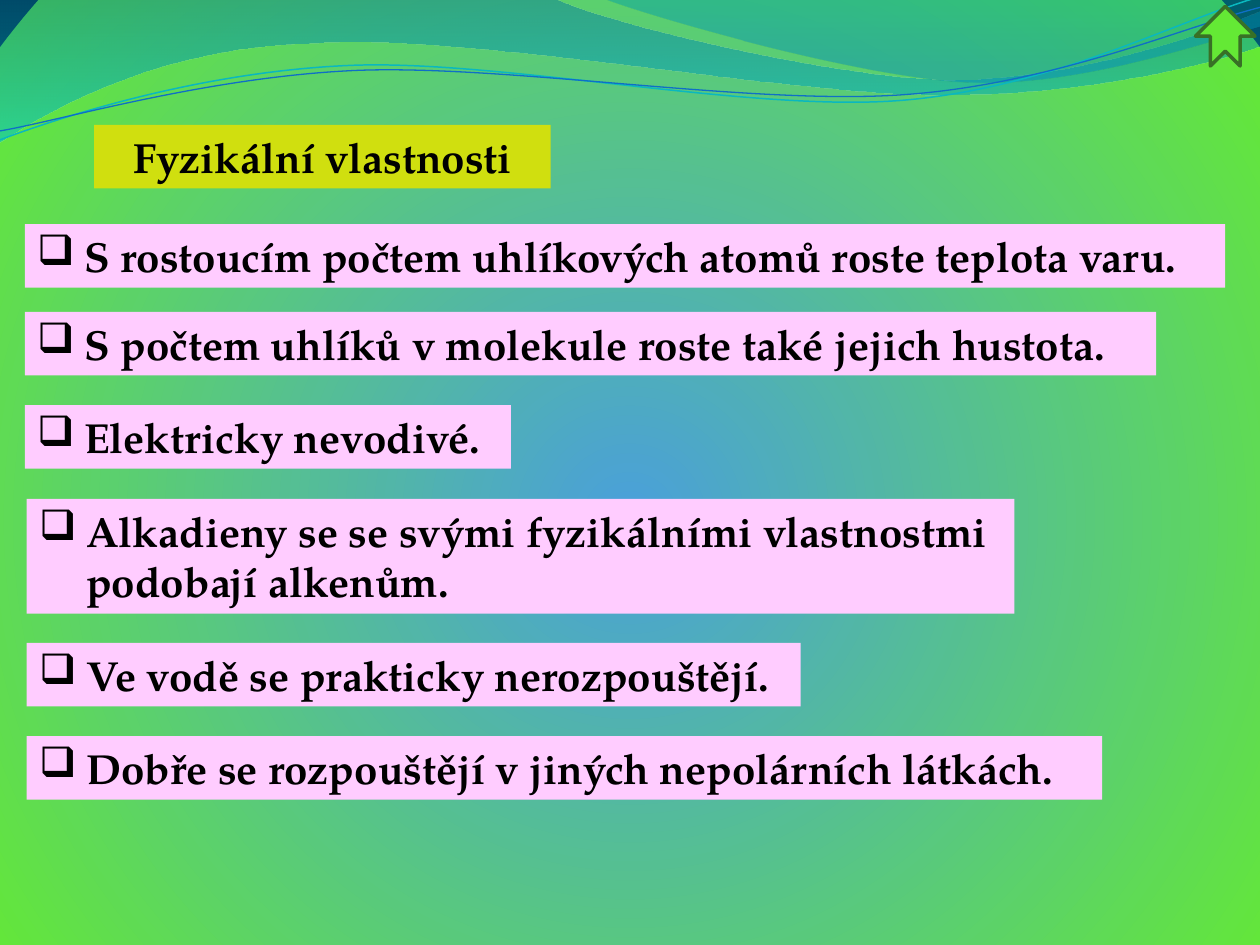
from dataclasses import dataclass

from lxml import etree
from pptx import Presentation
from pptx.dml.color import RGBColor
from pptx.enum.shapes import MSO_SHAPE
from pptx.enum.text import MSO_AUTO_SIZE, PP_ALIGN
from pptx.oxml.ns import qn
from pptx.util import Cm, Pt

ARROW = MSO_SHAPE.NOTCHED_RIGHT_ARROW
GROW = MSO_AUTO_SIZE.SHAPE_TO_FIT_TEXT
LEFT = PP_ALIGN.LEFT
CENTER = PP_ALIGN.CENTER


@dataclass(frozen=True)
class Theme:
    font: str = "TeX Gyre Pagella"
    text_size: float = 24
    text: str = "000000"
    title_fill: str = "D0DF0F"
    fact_fill: str = "FFCCFF"
    arrow_fill: str = "64E935"
    arrow_line: str = "387026"
    background: tuple = ((0, "4A9FDB", 100), (100, "64E935", 100), (100, "002A3C", 100))
    wide_wave: tuple = ((0, "0074A1", 45), (100, "00C6CF", 55))
    right_wave: tuple = ((0, "00A1A9", 45), (80, "008BBF", 45))
    cyan_line: str = "0AB8BF"
    blue_line: str = "0F6FC6"


THEME = Theme()

WIDE_WAVE = [
    (0, 0), (11.18, -0.03),
    (12.09, 0.43, 16.87, 1.6, 19.25, 1.6),
    (21.67, 1.6, 24.33, 0.66, 25.4, 0.23),
    (25.43, 0.91),
    (24.97, 1.12, 22.1, 1.93, 18.95, 1.91),
    (15.8, 1.91, 9.7, 0.71, 6.53, 0.86),
    (3.28, 0.91, 1.17, 2.11, -0.03, 2.87),
    (0, 0),
]
RIGHT_WAVE = [
    (12.17, -0.03),
    (12.93, 0.28, 17.32, 1.57, 19.53, 1.65),
    (21.74, 1.75, 24.41, 0.81, 25.4, 0.53),
    (25.4, 0), (12.17, -0.03),
]
CYAN_CURVE = [
    (0, 2.82),
    (1.22, 2.36, 4.01, 1.45, 7.04, 1.32),
    (10.03, 1.19, 15.06, 2.26, 18.11, 2.03),
    (21.16, 1.8, 23.83, 0.38, 25.35, -0.05),
]
BLUE_CURVE = [
    (0, 2.64),
    (1.19, 2.44, 4.17, 1.55, 7.19, 1.42),
    (10.24, 1.3, 15.16, 2.13, 18.21, 1.91),
    (21.23, 1.7, 23.9, 0.53, 25.4, 0.15),
]
FACTS = [
    ("S rostoucím počtem uhlíkových atomů roste teplota varu.", 0.5, 4.52, 24.2, 1.28),
    ("S počtem uhlíků v molekule roste také jejich hustota.", 0.5, 6.29, 22.81, 1.28),
    ("Elektricky nevodivé.", 0.5, 8.17, 9.8, 1.28),
    ("Alkadieny se se svými fyzikálními vlastnostmi podobají alkenům.", 0.54, 10.06, 19.91, 2.31),
    ("Ve vodě se prakticky nerozpouštějí.", 0.54, 12.96, 15.6, 1.28),
    ("Dobře se rozpouštějí v jiných nepolárních látkách.", 0.54, 14.84, 21.68, 1.28),
]


def set_gradient(fill, element, stops, radial=False):
    fill.gradient()
    gradient = next(element.iter(qn("a:gradFill")))
    for child in list(gradient):
        gradient.remove(child)
    stop_list = etree.SubElement(gradient, qn("a:gsLst"))
    for position, color, opacity in stops:
        stop = etree.SubElement(stop_list, qn("a:gs"), pos=str(position * 1000))
        color_element = etree.SubElement(stop, qn("a:srgbClr"), val=color)
        if opacity < 100:
            etree.SubElement(color_element, qn("a:alpha"), val=str(opacity * 1000))
    if radial:
        circle = etree.SubElement(gradient, qn("a:path"), path="circle")
        etree.SubElement(circle, qn("a:fillToRect"), l="10000", t="110000", r="10000", b="100000")
    else:
        etree.SubElement(gradient, qn("a:lin"), ang="5400000", scaled="1")


def add_outline(slide, segments, closed):
    start, *ends = [(Cm(segment[-2]), Cm(segment[-1])) for segment in segments]
    builder = slide.shapes.build_freeform(*start)
    builder.add_line_segments(ends, close=closed)
    shape = builder.convert_to_shape()
    shape.shadow.inherit = False
    steps = list(shape.element.iter(qn("a:lnTo")))
    for step, segment in zip(steps, segments[1:]):
        if len(segment) == 2:
            continue
        curve = etree.Element(qn("a:cubicBezTo"))
        for x, y in zip(segment[::2], segment[1::2]):
            etree.SubElement(curve, qn("a:pt"), x=str(Cm(x) - shape.left), y=str(Cm(y) - shape.top))
        step.getparent().replace(step, curve)
    return shape


def add_wave(slide, segments, stops):
    shape = add_outline(slide, segments, True)
    set_gradient(shape.fill, shape.element, stops)
    shape.line.fill.background()


def add_curve(slide, segments, color, width):
    shape = add_outline(slide, segments, False)
    shape.fill.background()
    shape.line.color.rgb = RGBColor.from_string(color)
    shape.line.width = Pt(width)


def add_bullet(paragraph):
    properties = paragraph._p.get_or_add_pPr()
    properties.set("marL", str(Cm(0.95)))
    properties.set("indent", str(Cm(-0.95)))
    etree.SubElement(properties, qn("a:buChar"), char="❑")


def add_text(slide, text, left, top, width, height, *, fill, align=LEFT, bullet=False):
    shape = slide.shapes.add_textbox(Cm(left), Cm(top), Cm(width), Cm(height))
    shape.fill.solid()
    shape.fill.fore_color.rgb = RGBColor.from_string(fill)
    shape.text_frame.word_wrap = True
    shape.text_frame.auto_size = GROW
    paragraph = shape.text_frame.paragraphs[0]
    paragraph.alignment = align
    if bullet:
        add_bullet(paragraph)
    run = paragraph.add_run()
    run.text = text
    run.font.name = THEME.font
    run.font.size = Pt(THEME.text_size)
    run.font.bold = True
    run.font.color.rgb = RGBColor.from_string(THEME.text)


def add_up_arrow(slide):
    shape = slide.shapes.add_shape(ARROW, Cm(24.1), Cm(0.13), Cm(1.2), Cm(1.2))
    shape.rotation = 270
    shape.shadow.inherit = False
    shape.fill.solid()
    shape.fill.fore_color.rgb = RGBColor.from_string(THEME.arrow_fill)
    shape.line.color.rgb = RGBColor.from_string(THEME.arrow_line)
    shape.line.width = Pt(2)


def main():
    presentation = Presentation()
    presentation.slide_width = Cm(25.4)
    presentation.slide_height = Cm(19.05)
    slide = presentation.slides.add_slide(presentation.slide_layouts[6])
    set_gradient(slide.background.fill, slide.element, THEME.background, radial=True)
    add_wave(slide, WIDE_WAVE, THEME.wide_wave)
    add_wave(slide, RIGHT_WAVE, THEME.right_wave)
    add_curve(slide, CYAN_CURVE, THEME.cyan_line, 0.85)
    add_curve(slide, BLUE_CURVE, THEME.blue_line, 0.75)
    add_text(slide, "Fyzikální vlastnosti", 1.9, 2.52, 9.2, 1.28,
             fill=THEME.title_fill, align=CENTER)
    for fact in FACTS:
        add_text(slide, *fact, fill=THEME.fact_fill, bullet=True)
    add_up_arrow(slide)
    presentation.save("out.pptx")


if __name__ == "__main__":
    main()
